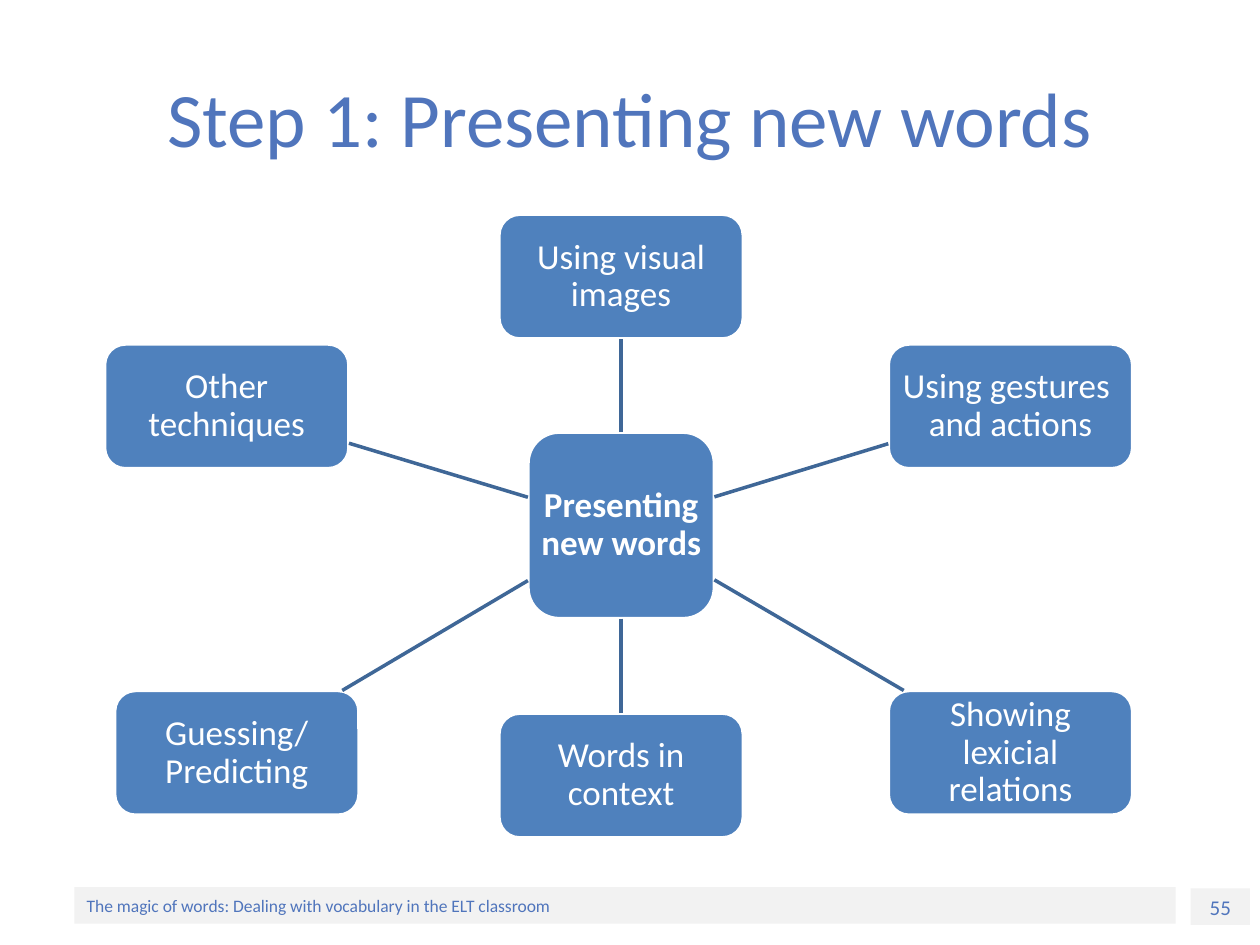
from lxml.etree import SubElement
from pptx import Presentation
from pptx.dml.color import RGBColor
from pptx.enum.shapes import MSO_CONNECTOR as Connector, MSO_SHAPE as Shape
from pptx.enum.text import MSO_ANCHOR as Anchor, PP_ALIGN as Align
from pptx.oxml.ns import qn
from pptx.util import Inches, Pt

COLORS = {
    "heading": "5075BC",
    "node": "4F81BD",
    "spoke": "3F6797",
    "footer": "F2F2F2",
    "white": "FFFFFF",
}
FONT = "Calibri"
NODE_SIZE = (1.94, 0.99)
HUB = (4.19, 3.43, 1.48, 1.48)
# Text, left, top, and (hub side, node side) where the spoke joins side middles
NODES = [
    ("Using visual images", 3.96, 1.7, (0, 2)),
    ("Using gestures \vand actions", 7.05, 2.73, None),
    ("Showing lexicial relations", 7.05, 5.48, None),
    ("Words in context", 3.96, 5.66, (2, 0)),
    ("Guessing/ Predicting", 0.91, 5.48, None),
    ("Other techniques", 0.83, 2.73, None),
]


def color(name):
    return RGBColor.from_string(COLORS[name])


def write(shape, text, size, color_name, bold=False, align=Align.CENTER,
          anchor=Anchor.MIDDLE, spacing=None, inset=None):
    frame = shape.text_frame
    frame.word_wrap = True
    frame.vertical_anchor = anchor
    if inset is not None:
        frame.margin_left = frame.margin_right = Inches(inset)
        frame.margin_top = frame.margin_bottom = Inches(inset)
    frame.text = text
    paragraph = frame.paragraphs[0]
    paragraph.alignment = align
    paragraph.line_spacing = spacing
    for run in paragraph.runs:
        run.font.name = FONT
        run.font.size = Pt(size)
        run.font.bold = bold
        run.font.color.rgb = color(color_name)


def center(box):
    left, top, width, height = box
    return left + width / 2, top + height / 2


def edge_point(box, target):
    """Point where the line from the box's centre to target leaves the box."""
    x, y = center(box)
    dx, dy = target[0] - x, target[1] - y
    scale = 1 / max(abs(dx) / (box[2] / 2), abs(dy) / (box[3] / 2))
    return x + dx * scale, y + dy * scale


class SlideBuilder:
    def __init__(self, slide):
        self.slide = slide

    def title(self, text, box):
        title = self.slide.shapes.title
        title.left, title.top, title.width, title.height = map(Inches, box)
        write(title, text, 44, "heading")

    def panel(self, kind, box, fill):
        shape = self.slide.shapes.add_shape(kind, *map(Inches, box))
        shape.shadow.inherit = False
        shape.fill.solid()
        shape.fill.fore_color.rgb = color(fill)
        shape.line.fill.background()
        return shape

    def footer(self, text, box, size, **text_format):
        shape = self.panel(Shape.RECTANGLE, box, "footer")
        write(shape, text, size, "heading", **text_format)

    def node(self, text, box, bold=False, inset=0.06):
        shape = self.panel(Shape.ROUNDED_RECTANGLE, box, "node")
        shape.line.color.rgb = color("white")
        shape.line.width = Pt(2)
        write(shape, text, 20, "white", bold=bold, spacing=0.9, inset=inset)
        return shape

    def spoke(self, hub, hub_box, node, node_box, sides):
        start = edge_point(hub_box, center(node_box))
        end = edge_point(node_box, center(hub_box))
        line = self.slide.shapes.add_connector(
            Connector.STRAIGHT, *map(Inches, start + end))
        line.line.color.rgb = color("spoke")
        line.line.width = Pt(2)
        SubElement(line.element.spPr, qn("a:effectLst"))
        if sides:
            line.begin_connect(hub, sides[0])
            line.end_connect(node, sides[1])


def main():
    presentation = Presentation()
    presentation.slide_width = Inches(10)
    presentation.slide_height = Inches(7.5)
    title_only = presentation.slide_layouts[5]
    builder = SlideBuilder(presentation.slides.add_slide(title_only))

    builder.footer("55", (9.45, 7.05, 0.47, 0.29), 12, anchor=Anchor.TOP)
    builder.footer(
        "The magic of words: Dealing with vocabulary in the ELT classroom",
        (0.59, 7.04, 8.74, 0.29), 10, align=Align.LEFT)
    builder.title("Step 1: Presenting new words", (0.5, 0.3, 9, 1.25))

    # The narrower inset keeps the hub's longest word on one line
    hub = builder.node("Presenting new words ", HUB, bold=True, inset=0.03)
    for text, left, top, sides in NODES:
        box = (left, top, *NODE_SIZE)
        node = builder.node(text, box)
        builder.spoke(hub, HUB, node, box, sides)

    presentation.save("out.pptx")


if __name__ == "__main__":
    main()
